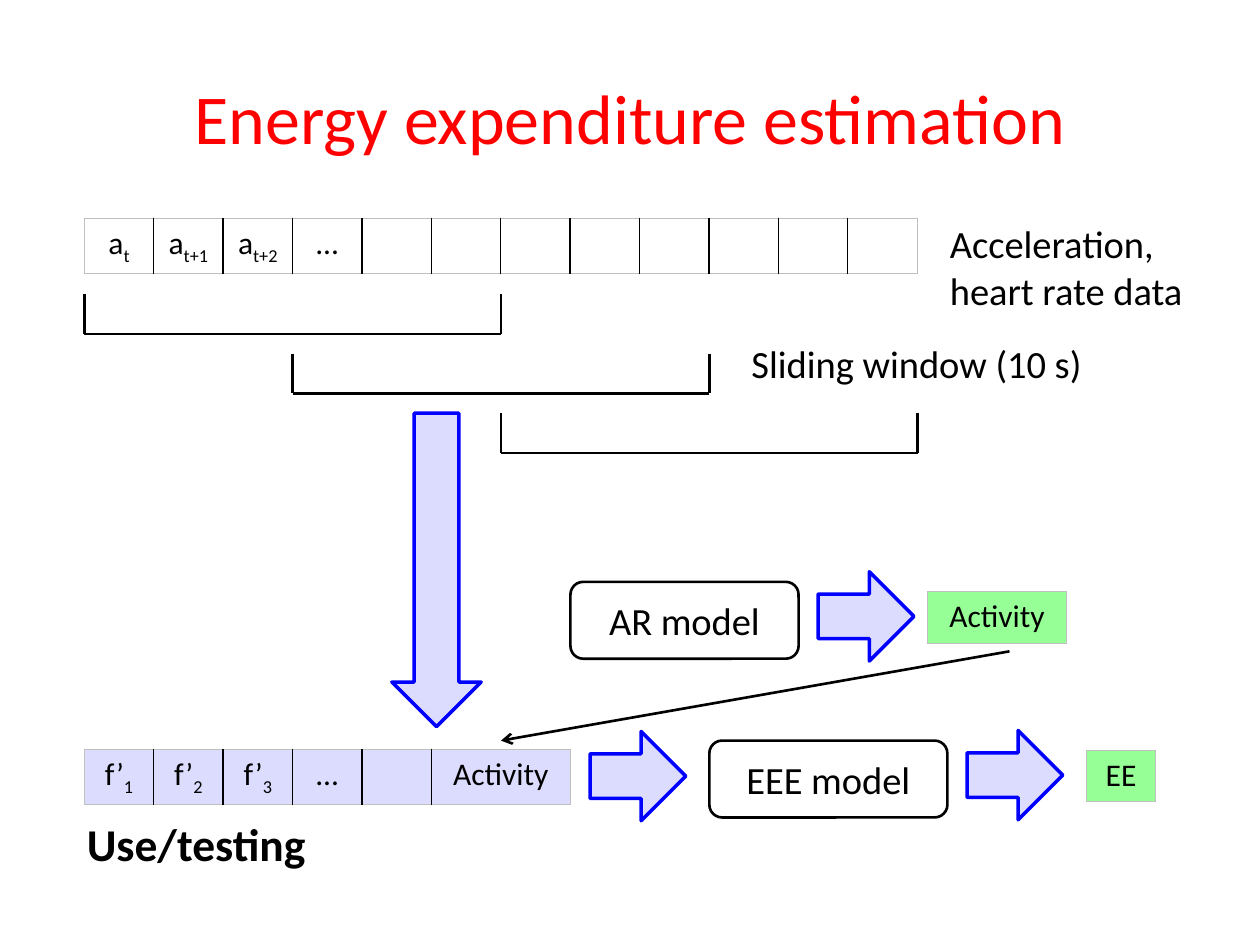
from dataclasses import dataclass

from lxml import etree
from pptx import Presentation
from pptx.dml.color import RGBColor
from pptx.enum.shapes import MSO_CONNECTOR, MSO_SHAPE
from pptx.enum.text import MSO_ANCHOR, MSO_AUTO_SIZE, PP_ALIGN
from pptx.oxml.ns import qn
from pptx.util import Cm, Pt

CENTER = PP_ALIGN.CENTER
MIDDLE = MSO_ANCHOR.MIDDLE
STRAIGHT = MSO_CONNECTOR.STRAIGHT
DOWN_ARROW = MSO_SHAPE.DOWN_ARROW
ROUNDED = MSO_SHAPE.ROUNDED_RECTANGLE


@dataclass(frozen=True)
class Theme:
    font: str = "Calibri"
    title: str = "FF0000"
    ink: str = "000000"
    frame: str = "C0C0C0"
    feature: str = "DCDCFF"
    arrow: str = "0000FF"
    result: str = "96FF96"
    title_size: int = 40
    heading_size: int = 26
    label_size: int = 22
    cell_size: int = 18


THEME = Theme()


def set_font(paragraph, size, color=THEME.ink, bold=False):
    font = paragraph.font
    font.name = THEME.font
    font.size = Pt(size)
    font.bold = bold
    font.color.rgb = RGBColor.from_string(color)


def add_line(start_x, start_y, end_x, end_y):
    """Draw a black line without shadow; lengths in centimetres."""
    line = slide.shapes.add_connector(
        STRAIGHT, Cm(start_x), Cm(start_y), Cm(end_x), Cm(end_y))
    line.line.color.rgb = RGBColor.from_string(THEME.ink)
    line.line.width = Pt(1.5)
    etree.SubElement(line._element.spPr, qn("a:effectLst"))
    return line


presentation = Presentation()
presentation.slide_width = Cm(25.4)
presentation.slide_height = Cm(19.05)
slide = presentation.slides.add_slide(presentation.slide_layouts[5])

title = slide.shapes.title
title.left, title.top, title.width, title.height = Cm(1.27), Cm(0.76), Cm(22.86), Cm(3.18)
title.text_frame.text = "Energy expenditure estimation"
title.text_frame.vertical_anchor = MIDDLE
title.text_frame.paragraphs[0].alignment = CENTER
set_font(title.text_frame.paragraphs[0], THEME.title_size, THEME.title)

# Everything on the left follows one grid of columns
GRID_LEFT = 1.7
COLUMN = 1.4
ROW_HEIGHT = 1.04

# Tables: left, top, fill, cells as (text, subscript, columns wide)
EMPTY = ("", "", 1)
DOTS = ("...", "", 1)
samples = [("a", "t", 1), ("a", "t+1", 1), ("a", "t+2", 1), DOTS] + [EMPTY] * 8
features = [("f’", str(number), 1) for number in (1, 2, 3)]
features += [DOTS, EMPTY, ("Activity", "", 2)]
tables = [
    (GRID_LEFT, 4.4, None, samples),
    (GRID_LEFT, 15.1, THEME.feature, features),
    (18.7, 11.92, THEME.result, [("Activity", "", 2)]),
    (21.9, 15.12, THEME.result, [("EE", "", 1)]),
]
for left, top, fill, cells in tables:
    width = COLUMN * sum(span for _, _, span in cells)
    table = slide.shapes.add_table(
        1, len(cells), Cm(left), Cm(top), Cm(width), Cm(ROW_HEIGHT)).table
    table.first_row = False
    table.horz_banding = False
    for index, (text, subscript, span) in enumerate(cells):
        table.columns[index].width = Cm(COLUMN * span)
        cell = table.cell(0, index)
        paragraph = cell.text_frame.paragraphs[0]
        paragraph.alignment = CENTER
        set_font(paragraph, THEME.cell_size)
        if text:
            paragraph.add_run().text = text
        if subscript:
            run = paragraph.add_run()
            run.text = subscript
            run._r.get_or_add_rPr().set("baseline", "-25000")

        outer_sides = {"lnT", "lnB"}
        if index == 0:
            outer_sides.add("lnL")
        if index == len(cells) - 1:
            outer_sides.add("lnR")
        properties = cell._tc.get_or_add_tcPr()
        for side in ("lnL", "lnR", "lnT", "lnB"):
            outer = side in outer_sides
            border = etree.SubElement(
                properties, qn(f"a:{side}"), w=str(Pt(0.5 if outer else 1)))
            solid = etree.SubElement(border, qn("a:solidFill"))
            etree.SubElement(
                solid, qn("a:srgbClr"), val=THEME.frame if outer else THEME.ink)
        if fill:
            cell.fill.solid()
            cell.fill.fore_color.rgb = RGBColor.from_string(fill)
        else:
            cell.fill.background()

# Sliding windows: six columns wide, each three columns further on
for step in range(3):
    left = GRID_LEFT + 3 * COLUMN * step
    right = left + 6 * COLUMN
    top = 5.93 + 1.2 * step
    bottom = top + 0.8
    add_line(left, top, left, bottom)
    add_line(right, top, right, bottom)
    add_line(right, bottom, left, bottom)

# Labels: text, left, top, width, height, size, bold
labels = [
    ("Acceleration,\vheart rate data", 18.9, 4.32, 5.26, 2.13, THEME.label_size, False),
    ("Sliding window (10 s)", 14.9, 6.73, 7.24, 1.19, THEME.label_size, False),
    ("Use/testing", 1.5, 16.33, 4.98, 1.37, THEME.heading_size, True),
]
for text, left, top, width, height, size, bold in labels:
    box = slide.shapes.add_textbox(Cm(left), Cm(top), Cm(width), Cm(height))
    box.text_frame.word_wrap = False
    box.text_frame.auto_size = MSO_AUTO_SIZE.SHAPE_TO_FIT_TEXT
    box.text_frame.text = text
    set_font(box.text_frame.paragraphs[0], size, bold=bold)

# Block arrows: left, top, length, rotation
arrows = [
    (7.9, 8.33, 6.32, 0),
    (11.96, 14.68, 1.93, 270),
    (16.56, 11.46, 1.93, 270),
    (19.56, 14.66, 1.93, 270),
]
for left, top, length, rotation in arrows:
    arrow = slide.shapes.add_shape(DOWN_ARROW, Cm(left), Cm(top), Cm(1.8), Cm(length))
    arrow.rotation = rotation
    arrow.shadow.inherit = False
    arrow.fill.solid()
    arrow.fill.fore_color.rgb = RGBColor.from_string(THEME.feature)
    arrow.line.color.rgb = RGBColor.from_string(THEME.arrow)
    arrow.line.width = Pt(2)

# Models: text, left, top, width
for text, left, top, width in [("AR model", 11.5, 11.73, 4.6),
                               ("EEE model", 14.3, 14.93, 4.8)]:
    model = slide.shapes.add_shape(ROUNDED, Cm(left), Cm(top), Cm(width), Cm(1.55))
    model.shadow.inherit = False
    model.fill.background()
    model.line.color.rgb = RGBColor.from_string(THEME.ink)
    model.line.width = Pt(1.5)
    model.text_frame.text = text
    model.text_frame.vertical_anchor = MIDDLE
    model.text_frame.paragraphs[0].alignment = CENTER
    set_font(model.text_frame.paragraphs[0], THEME.label_size)

# The recognised activity feeds the energy model
feedback = add_line(20.35, 13.13, 10.1, 14.93)
etree.SubElement(feedback.line._get_or_add_ln(), qn("a:tailEnd"), type="arrow")

presentation.save("out.pptx")
